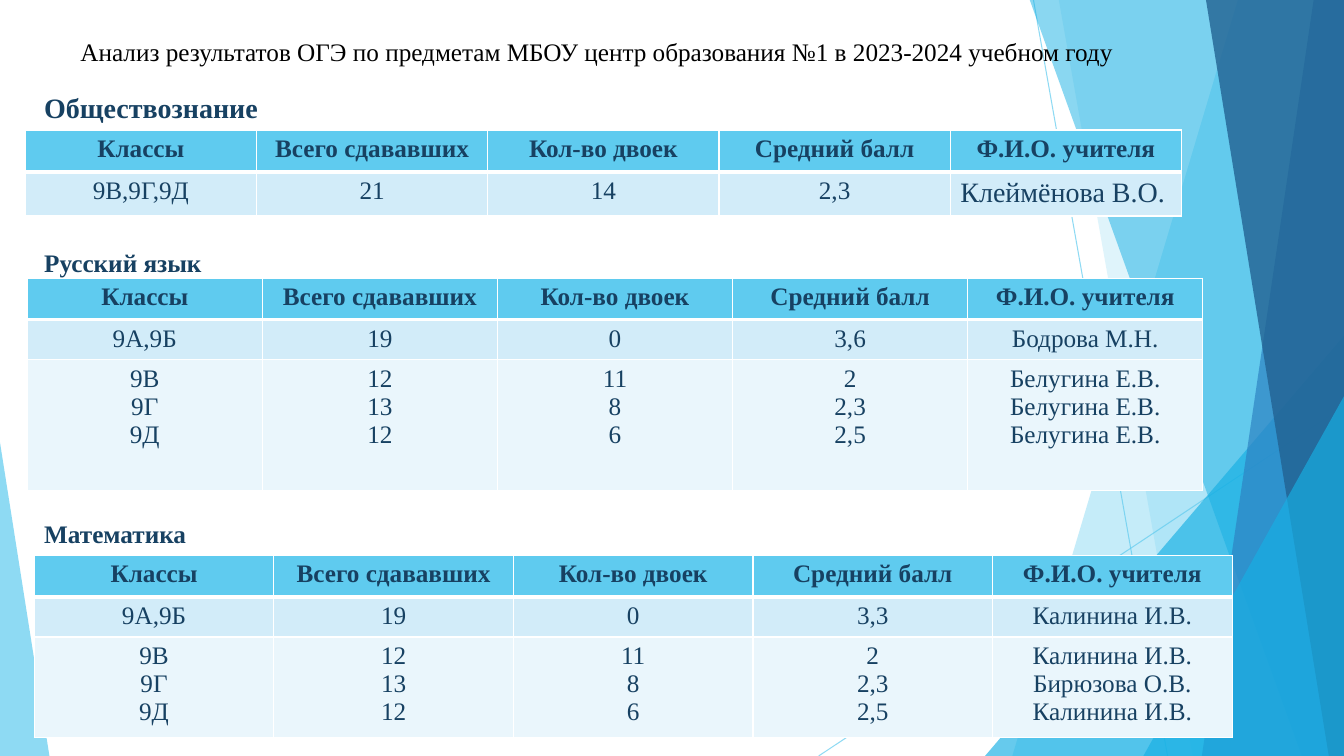
from lxml import etree
from pptx import Presentation
from pptx import util as u
from pptx.dml.color import RGBColor
from pptx.enum import shapes, text
from pptx.oxml import ns

PX = 9144
FONT = "Times New Roman"
COLORS = {
    "sky": "5FCBEF", "cyan": "17B0E4", "blue": "2E83C3", "deep": "226292",
    "ink": "174162", "black": "000000", "white": "FFFFFF",
    "band": "D2ECF9", "pale": "EAF6FC",
}
HEADER = ["Классы", "Всего сдававших", "Кол-во двоек", "Средний балл", "Ф.И.О. учителя"]
WEAK_CLASSES = ["9В\n9Г\n9Д", "12\n13\n12", "11\n8\n6", "2\n2,3\n2,5"]
TITLE = "Анализ результатов ОГЭ по предметам МБОУ центр образования №1 в 2023-2024 учебном году"


def px(*values):
    """Turn px lengths into EMU."""
    return [u.Emu(v * PX) for v in values]


def rgb(color):
    """Look up a colour by name."""
    return RGBColor.from_string(COLORS[color])


def set_alpha(fill_parent, opacity):
    """Give the solid fill under an element an opacity in percent."""
    clr = fill_parent.find(ns.qn("a:solidFill"))[0]
    etree.SubElement(clr, ns.qn("a:alpha")).set("val", str(opacity * 1000))


def paint(sp, color, opacity):
    """Fill a shape with a translucent colour, without line or shadow."""
    sp.shadow.inherit = False
    sp.fill.solid()
    sp.fill.fore_color.rgb = rgb(color)
    sp.line.fill.background()
    set_alpha(sp._element.spPr, opacity)


def add_thin_line(s, ends):
    """Draw one of the thin translucent lines."""
    line = s.shapes.add_connector(shapes.MSO_CONNECTOR.STRAIGHT, *px(*ends))
    line.line.color.rgb = rgb("sky")
    line.line.width = u.Pt(0.75)
    sp_pr = line._element.spPr
    set_alpha(sp_pr.find(ns.qn("a:ln")), 70)
    etree.SubElement(sp_pr, ns.qn("a:effectLst"))


def add_facet(s, top_left, bottom_left, color, opacity):
    """Draw a full-height facet that reaches the right edge."""
    outline = s.shapes.build_freeform(top_left, -1, scale=PX)
    outline.add_line_segments([(1333, -1), (1333, 750), (bottom_left, 750)])
    paint(outline.convert_to_shape(), color, opacity)


def add_triangle(s, box, apex, color, opacity):
    """Draw a right-angled triangle with its apex at one side."""
    sp = s.shapes.add_shape(shapes.MSO_SHAPE.ISOSCELES_TRIANGLE, *px(*box))
    sp.adjustments[0] = apex
    paint(sp, color, opacity)


def add_run(p, words, size, color, bold):
    """Add one formatted run to a paragraph."""
    r = p.add_run()
    r.text = words
    r.font.name = FONT
    r.font.size = u.Pt(size)
    r.font.bold = bold
    r.font.color.rgb = rgb(color)


def add_label(s, box, words, size=18, color="ink", bold=True):
    """Add a one-line text box."""
    tf = s.shapes.add_textbox(*px(*box)).text_frame
    tf.word_wrap = True
    tf.auto_size = text.MSO_AUTO_SIZE.SHAPE_TO_FIT_TEXT
    add_run(tf.paragraphs[0], words, size, color, bold)


def add_borders(cell, widths):
    """Give a cell white borders, widths in points by side."""
    tc_pr = cell._tc.get_or_add_tcPr()
    for i, (side, width) in enumerate(widths.items()):
        ln = etree.Element(ns.qn(f"a:ln{side}"), w=str(u.Pt(width)))
        fill = etree.SubElement(ln, ns.qn("a:solidFill"))
        etree.SubElement(fill, ns.qn("a:srgbClr")).set("val", COLORS["white"])
        tc_pr.insert(i, ln)


def fill_cell(cell, words, row, size, align):
    """Write and style one table cell according to its row."""
    cell.fill.solid()
    cell.fill.fore_color.rgb = rgb(["sky", "band", "pale"][row])
    tf = cell.text_frame
    for i, line in enumerate(words.split("\n")):
        p = tf.add_paragraph() if i else tf.paragraphs[0]
        p.alignment = align
        add_run(p, line, size, "ink", row == 0)
    add_borders(cell, {"L": 1, "R": 1, "T": 3 if row == 1 else 1, "B": 3 if row == 0 else 1})


def add_results(s, left, top, width, heights, body, large_name=False):
    """Add a results table with five equal columns."""
    rows = [HEADER] + body
    frame = s.shapes.add_table(len(rows), len(HEADER), *px(left, top, width, sum(heights)))
    table = frame.table
    for column in table.columns:
        column.width = u.Emu(width * PX // len(HEADER))
    for i, values in enumerate(rows):
        table.rows[i].height = px(heights[i])[0]
        for j, words in enumerate(values):
            large = large_name and i > 0 and j == len(HEADER) - 1
            align = text.PP_ALIGN.LEFT if large else text.PP_ALIGN.CENTER
            fill_cell(table.cell(i, j), words, i, 20 if large else 18, align)


def add_backdrop(s):
    """Draw the faceted decoration at both edges."""
    add_thin_line(s, (1025, 0, 1158, 750))
    add_thin_line(s, (1333, 403, 812, 750))
    add_facet(s, 1228, 1004, "sky", 36)
    add_facet(s, 1050, 1183, "sky", 20)
    add_triangle(s, (977, 333, 356, 417), 1, "cyan", 66)
    add_facet(s, 1021, 1291, "cyan", 50)
    add_facet(s, 1303, 1192, "blue", 70)
    add_facet(s, 1196, 1318, "deep", 80)
    add_triangle(s, (1134, 393, 199, 357), 1, "cyan", 66)
    add_triangle(s, (0, 439, 49, 311), 0, "sky", 70)


def main():
    """Build the slide and save it."""
    prs = Presentation()
    prs.slide_width, prs.slide_height = px(1333, 750)
    s = prs.slides.add_slide(prs.slide_layouts[6])
    add_backdrop(s)
    add_label(s, (70, 31, 1080, 40), TITLE, color="black", bold=False)

    add_label(s, (34, 85, 324, 44), "Обществознание", size=20)
    add_results(s, 25, 129, 1147, [42, 42],
                [["9В,9Г,9Д", "21", "14", "2,3", "Клеймёнова В.О."]], large_name=True)

    add_label(s, (34, 240, 178, 40), "Русский язык")
    add_results(s, 27, 276, 1166, [41, 40, 130], [
        ["9А,9Б", "19", "0", "3,6", "Бодрова М.Н."],
        WEAK_CLASSES + ["Белугина Е.В.\nБелугина Е.В.\nБелугина Е.В."]])

    add_label(s, (34, 509, 302, 40), "Математика")
    add_results(s, 34, 551, 1188, [41, 40, 100], [
        ["9А,9Б", "19", "0", "3,3", "Калинина И.В."],
        WEAK_CLASSES + ["Калинина И.В. Бирюзова О.В.\nКалинина И.В."]])

    prs.save("out.pptx")


if __name__ == "__main__":
    main()
